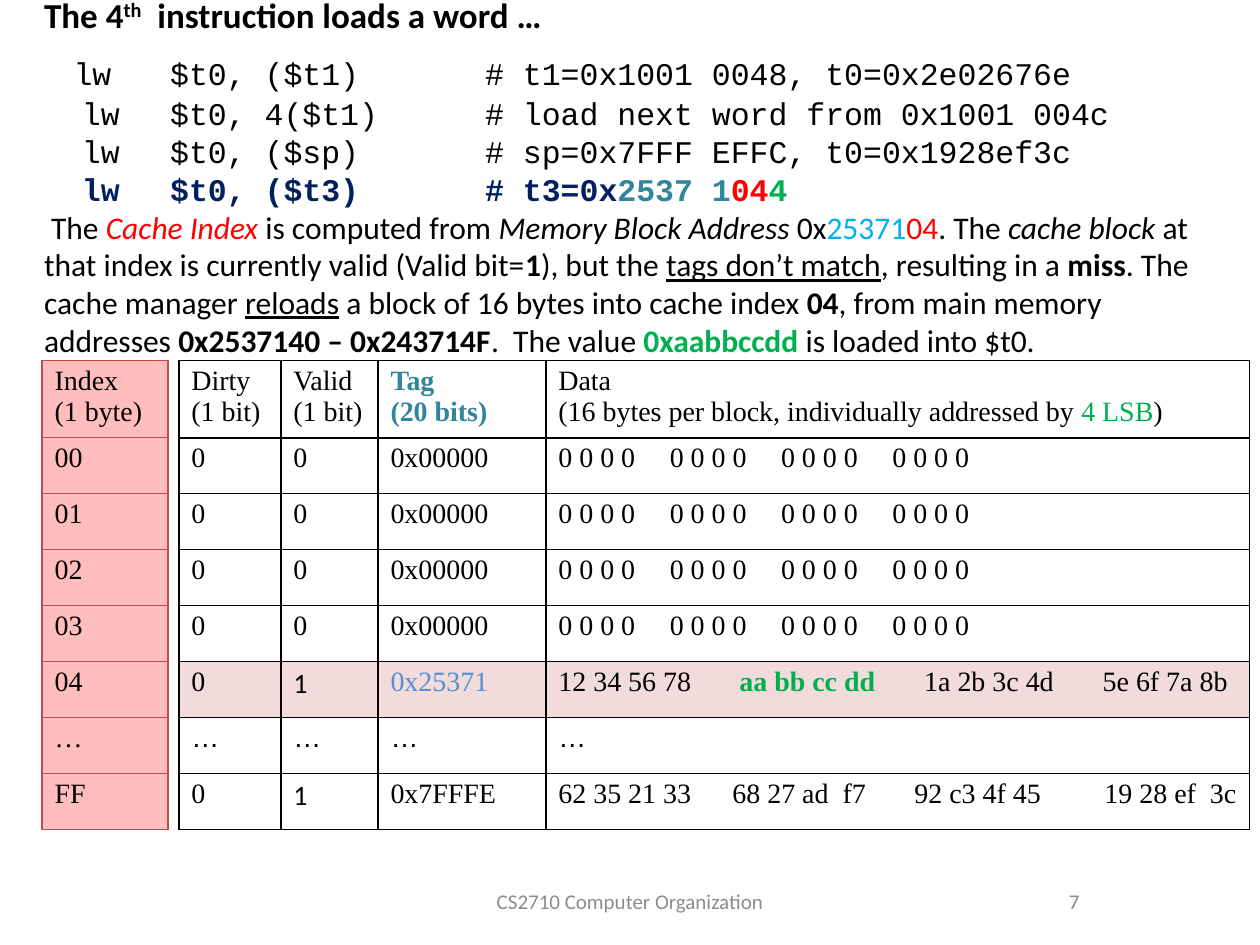
from dataclasses import dataclass

from lxml import etree
from pptx import Presentation
from pptx import util as u
from pptx.dml.color import RGBColor
from pptx.enum import text
from pptx.oxml import ns

Pt = u.Pt
BLACK, NAVY, TEAL, RED, GREEN = "000000", "002060", "31859C", "FF0000", "00B050"
SKY, BLUE, GREY, BRICK = "00B0F0", "558ED5", "8C8C8C", "BF4C48"
WHITE, ROSE, PINK = "FFFFFF", "F2DCDB", "FFBEBD"
SANS, SERIF, MONO = "Calibri", "Times New Roman", "Courier New"


@dataclass
class Span:
    text: str
    color: str = BLACK
    bold: bool = False
    italic: bool = False
    underline: bool = False
    raised: bool = False


@dataclass
class Line:
    spans: list[Span]
    font: str
    size: float
    height: float
    indent: float = 0


@dataclass
class Cell:
    lines: list[list[Span]]
    font: str = SERIF
    stops: tuple[float, ...] = ()


@dataclass
class Grid:
    left: float
    widths: list[float]
    border: str
    border_width: float
    fills: list[str]
    rows: list[list[Cell]]


def rgb(value: str) -> RGBColor:
    return RGBColor.from_string(value)


def write(p, spans: list[Span], font: str, size: float) -> None:
    for span in spans:
        r = p.add_run()
        r.text = span.text
        formats = {"name": font, "size": Pt(size), "bold": span.bold,
                   "italic": span.italic, "underline": span.underline}
        for name, value in formats.items():
            setattr(r.font, name, value)
        r.font.color.rgb = rgb(span.color)
        if span.raised:
            r.font._element.set("baseline", "30000")


def paragraph(tf, index: int):
    return tf.add_paragraph() if index else tf.paragraphs[0]


def draw_title(s, lines: list[Line]) -> None:
    sp = s.shapes.title
    frame = {"left": 18, "top": -4, "width": 672, "height": 210}
    for name, value in frame.items():
        setattr(sp, name, Pt(value))
    tf = sp.text_frame
    formats = {"margin_top": 0, "margin_bottom": 0, "word_wrap": True,
               "auto_size": text.MSO_AUTO_SIZE.NONE,
               "vertical_anchor": text.MSO_ANCHOR.TOP}
    for name, value in formats.items():
        setattr(tf, name, value)
    for i, line in enumerate(lines):
        p = paragraph(tf, i)
        p.alignment = text.PP_ALIGN.LEFT
        p.line_spacing = Pt(line.height)
        p._p.get_or_add_pPr().set("indent", str(Pt(line.indent)))
        write(p, line.spans, line.font, line.size)


def draw_footer(s, left: float, width: float, label: str, align) -> None:
    sp = s.shapes.add_textbox(Pt(left), Pt(500.4), Pt(width), Pt(28.8))
    tf = sp.text_frame
    tf.word_wrap = True
    tf.vertical_anchor = text.MSO_ANCHOR.MIDDLE
    p = tf.paragraphs[0]
    p.alignment = align
    write(p, [Span(label, GREY)], SANS, 12)


def add_borders(cell, color: str, width: float) -> None:
    pr = cell._tc.get_or_add_tcPr()
    for side in ("lnL", "lnR", "lnT", "lnB"):
        ln = etree.SubElement(pr, ns.qn(f"a:{side}"), w=str(Pt(width)))
        fill = etree.SubElement(ln, ns.qn("a:solidFill"))
        etree.SubElement(fill, ns.qn("a:srgbClr"), val=color)


def add_stops(p, stops: tuple[float, ...]) -> None:
    tabs = etree.SubElement(p._p.get_or_add_pPr(), ns.qn("a:tabLst"))
    for stop in stops:
        etree.SubElement(tabs, ns.qn("a:tab"), pos=str(Pt(stop)), algn="l")


def draw_grid(s, grid: Grid) -> None:
    heights = [42.8] + [32] * (len(grid.rows) - 1)
    table = s.shapes.add_table(len(grid.rows), len(grid.widths), Pt(grid.left), Pt(206),
                               Pt(sum(grid.widths)), Pt(sum(heights))).table
    table.first_row = table.horz_banding = False
    for column, width in zip(table.columns, grid.widths):
        column.width = Pt(width)
    for r, (row, height) in enumerate(zip(grid.rows, heights)):
        table.rows[r].height = Pt(height)
        for c, content in enumerate(row):
            cell = table.cell(r, c)
            cell.margin_top, cell.margin_bottom = Pt(3), Pt(2.8)
            add_borders(cell, grid.border, grid.border_width)
            cell.fill.solid()
            cell.fill.fore_color.rgb = rgb(grid.fills[r])
            for i, spans in enumerate(content.lines):
                p = paragraph(cell.text_frame, i)
                if content.stops:
                    add_stops(p, content.stops)
                write(p, spans, content.font, 16)


def plain(*lines: str, font: str = SERIF, color: str = BLACK, bold: bool = False) -> Cell:
    return Cell([[Span(line, color, bold)] for line in lines], font)


def code(instruction: str, comment: str, height: float, indent: float = 21.6) -> Line:
    return Line([Span(f"lw \t{instruction}  \t\t# {comment}")], MONO, 18, height, indent)


def main() -> None:
    prs = Presentation()
    prs.slide_width, prs.slide_height = Pt(720), Pt(540)
    s = prs.slides.add_slide(prs.slide_layouts[5])

    heading = [Span("The 4", bold=True), Span("th", bold=True, raised=True),
               Span("  instruction loads a word …", bold=True)]
    current = [Span("lw \t$t0, ($t3)  \t\t# t3=0x", NAVY, True), Span("2537 1", TEAL, True),
               Span("04", RED, True), Span("4", GREEN, True)]
    story = [
        Span("The "), Span("Cache Index ", RED, italic=True), Span("is computed from "),
        Span("Memory Block Address", italic=True), Span(" 0x"), Span("25371", SKY),
        Span("04", RED), Span(". The "), Span("cache block", italic=True),
        Span(" at that index is currently valid (Valid bit="), Span("1", bold=True),
        Span("), but the "), Span("tags don’t match", underline=True),
        Span(", resulting in a "), Span("miss", bold=True), Span(". The cache manager "),
        Span("reloads", underline=True), Span(" a block of 16 bytes into cache index "),
        Span("04", bold=True), Span(", from main memory addresses "),
        Span("0x2537140 – 0x243714F", bold=True), Span(".  The value "),
        Span("0xaabbccdd", GREEN, True), Span(" is loaded into $t0."),
    ]
    draw_title(s, [
        Line(heading, SANS, 20, 24),
        code("($t1)".join(["$t0, ", ""]), "t1=0x1001 0048, t0=0x2e02676e", 32.5, 16.8),
        code("$t0, 4($t1)", "load next word from 0x1001 004c", 22.9),
        code("$t0, ($sp)", "sp=0x7FFF EFFC, t0=0x1928ef3c", 21.7),
        Line(current, MONO, 18, 21.7, 21.6),
        Line(story, SANS, 18, 21.5, 4),
    ])
    draw_footer(s, 246, 228, "CS2710 Computer Organization", text.PP_ALIGN.CENTER)
    draw_footer(s, 516, 108, "7", text.PP_ALIGN.RIGHT)

    header = [
        plain("Dirty", "(1 bit)"), plain("Valid", "(1 bit)"),
        plain("Tag", "(20 bits)", color=TEAL, bold=True),
        Cell([[Span("Data")], [Span("(16 bytes per block, individually addressed by "),
                               Span("4 LSB", GREEN), Span(")")]]),
    ]
    zeros = Cell([[Span("\t".join(["0 0 0 0"] * 4))]], stops=(63.6, 127.2, 190.8))
    empty = [plain("0"), plain("0"), plain("0x00000"), zeros]
    loaded = [
        plain("0"), plain("1", font=SANS), plain("0x25371", color=BLUE),
        Cell([[Span("12 34 56 78\t"), Span("aa bb cc dd\t", GREEN, True),
               Span("1a 2b 3c 4d\t5e 6f 7a 8b")]], stops=(103.4, 209, 311)),
    ]
    last = [
        plain("0"), plain("1", font=SANS), plain("0x7FFFE"),
        Cell([[Span("62 35 21 33\t68 27 ad  f7\t92 c3 4f 45\t19 28 ef  3c")]],
             stops=(99.4, 203.4, 312)),
    ]
    dots = [plain("…", font="Arial")] * 4
    draw_grid(s, Grid(102.2, [58.3, 55.5, 96, 402], BLACK, 1,
                      [WHITE] * 5 + [ROSE] + [WHITE] * 2,
                      [header] + [empty] * 4 + [loaded, dots, last]))
    indexes = ["00", "01", "02", "03", "04", "…", "FF"]
    draw_grid(s, Grid(24, [72], BRICK, 0.75, [PINK] * 8,
                      [[plain("Index", "(1 byte)")]] + [[plain(i)] for i in indexes]))
    prs.save("out.pptx")


if __name__ == "__main__":
    main()
